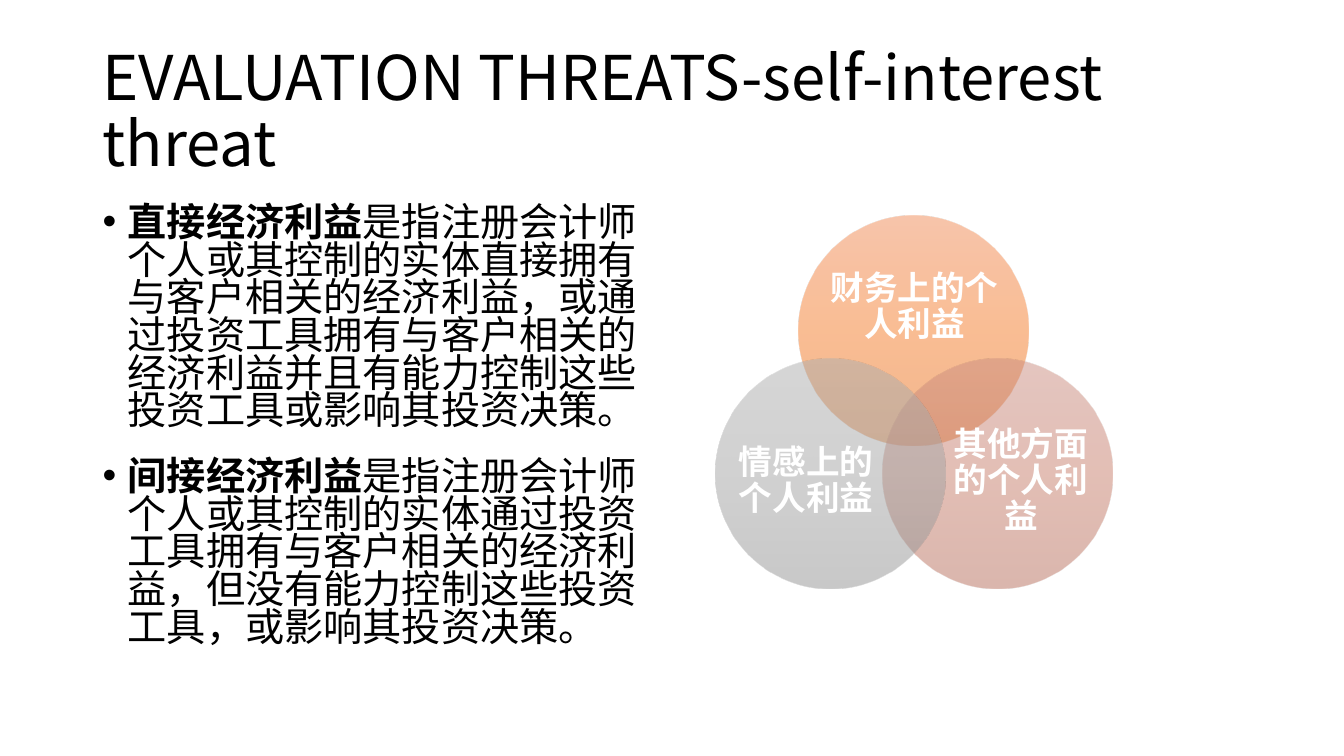
from dataclasses import dataclass

from lxml import etree
from pptx import Presentation
from pptx.dml.color import RGBColor
from pptx.enum.shapes import MSO_SHAPE
from pptx.enum.text import MSO_ANCHOR, PP_ALIGN
from pptx.oxml.ns import qn
from pptx.util import Inches, Pt


@dataclass(frozen=True)
class Theme:
    font: str = "Noto Sans CJK SC"
    ink: str = "000000"
    label_ink: str = "FFFFFF"
    orange: tuple = ("F18C57", "F67B28", "E56C19")
    rose: tuple = ("CB8F81", "C97E6B", "B76D5B")
    grey: tuple = ("AFAFAF", "A5A5A5", "939393")
    opacity: int = 50
    title_size: int = 44
    body_size: int = 28
    label_size: int = 24


theme = Theme()


def add_frame(left, top, width, height, anchor, inset_x=0, inset_y=0):
    box = slide.shapes.add_textbox(Inches(left), Inches(top), Inches(width), Inches(height))
    frame = box.text_frame
    frame.word_wrap = True
    frame.vertical_anchor = anchor
    frame.margin_left = frame.margin_right = Inches(inset_x)
    frame.margin_top = frame.margin_bottom = Inches(inset_y)
    return frame


def add_run(paragraph, text, size, color, bold=False):
    run = paragraph.add_run()
    run.text = text
    run.font.size = Pt(size)
    run.font.bold = bold
    run.font.name = theme.font
    run.font.color.rgb = RGBColor.from_string(color)
    etree.SubElement(run.font._element, qn("a:ea"), typeface=theme.font)


prs = Presentation()
prs.slide_width = Inches(13.33)
prs.slide_height = Inches(7.5)
slide = prs.slides.add_slide(prs.slide_layouts[6])

title = add_frame(0.92, 0.4, 11.5, 1.45, MSO_ANCHOR.MIDDLE, 0.1, 0.05).paragraphs[0]
title.line_spacing = 0.9
add_run(title, "EVALUATION THREATS-self-interest threat", theme.title_size, theme.ink)

definitions = [
    ("直接经济利益",
     "是指注册会计师个人或其控制的实体直接拥有与客户相关的经济利益，"
     "或通过投资工具拥有与客户相关的经济利益并且有能力控制这些投资工具或影响其投资决策。"),
    ("间接经济利益",
     "是指注册会计师个人或其控制的实体通过投资工具拥有与客户相关的经济利益，"
     "但没有能力控制这些投资工具，或影响其投资决策。"),
]
body = add_frame(0.92, 2, 5.67, 4.76, MSO_ANCHOR.TOP, 0.1, 0.05)
for index, (term, meaning) in enumerate(definitions):
    definition = body.add_paragraph() if index else body.paragraphs[0]
    definition.line_spacing = 0.8
    definition.space_before = Pt(10)
    definition.space_after = Pt(10)
    properties = definition._p.get_or_add_pPr()
    properties.set("marL", str(Inches(0.25)))
    properties.set("indent", str(-Inches(0.25)))
    etree.SubElement(properties, qn("a:buFont"), typeface="Arial")
    etree.SubElement(properties, qn("a:buChar"), char="•")
    add_run(definition, term, theme.body_size, theme.ink, bold=True)
    add_run(definition, meaning, theme.body_size, theme.ink)

diameter = 2.28
interests = [
    ("财务上的个人利益", theme.orange, (7.92, 2.14), (8.23, 2.54, 1.68, 1.03)),
    ("其他方面的个人利益", theme.rose, (8.75, 3.56), (9.44, 4.15, 1.37, 1.26)),
    ("情感上的个人利益", theme.grey, (7.1, 3.56), (7.31, 4.15, 1.37, 1.26)),
]
for interest, shades, (left, top), label_area in interests:
    circle = slide.shapes.add_shape(
        MSO_SHAPE.OVAL, Inches(left), Inches(top), Inches(diameter), Inches(diameter))
    circle.shadow.inherit = False
    circle.line.fill.background()
    circle.fill.gradient()
    circle.fill.gradient_angle = 270
    stops = circle._element.spPr.find(qn("a:gradFill")).find(qn("a:gsLst"))
    for stop in list(stops):
        stops.remove(stop)
    for position, shade in zip((0, 50, 100), shades):
        stop = etree.SubElement(stops, qn("a:gs"), pos=str(position * 1000))
        color = etree.SubElement(stop, qn("a:srgbClr"), val=shade)
        etree.SubElement(color, qn("a:alpha"), val=str(theme.opacity * 1000))

    label = add_frame(*label_area, MSO_ANCHOR.MIDDLE).paragraphs[0]
    label.alignment = PP_ALIGN.CENTER
    label.line_spacing = 0.9
    add_run(label, interest, theme.label_size, theme.label_ink, bold=True)

prs.save("out.pptx")
